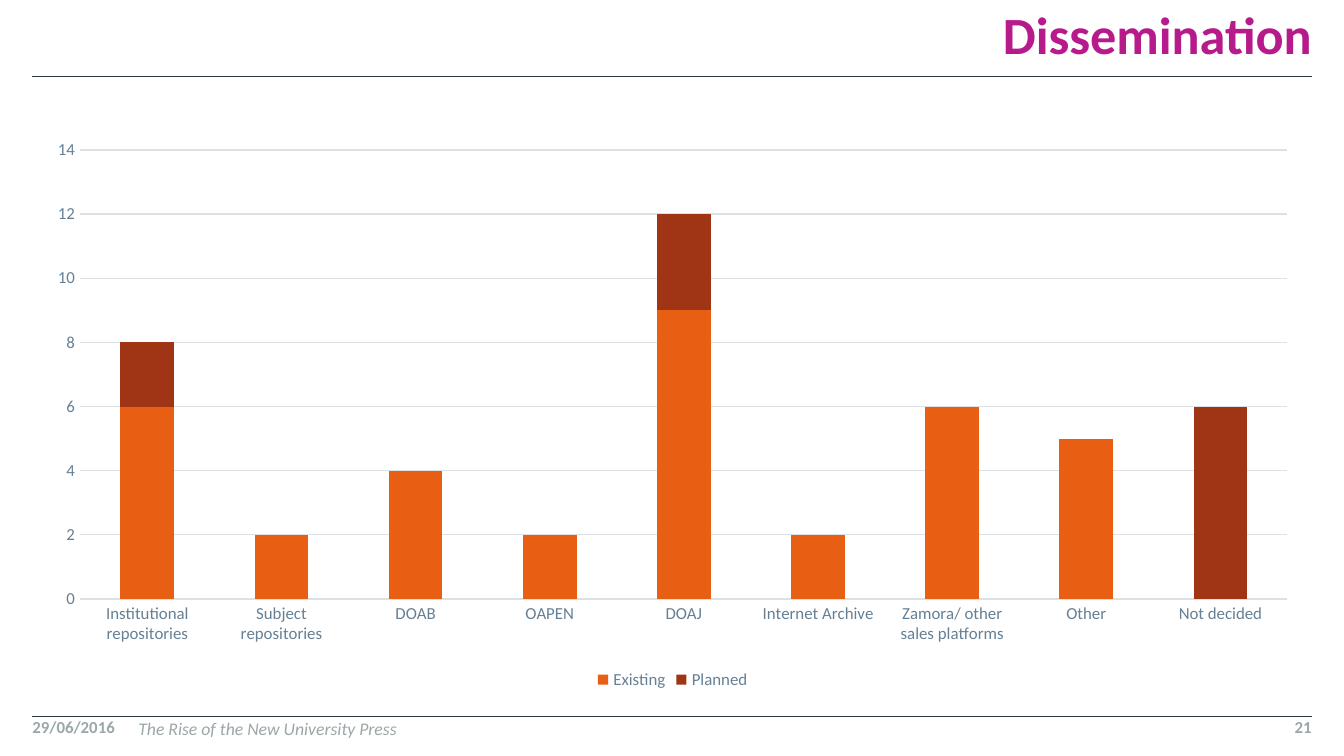
from lxml import etree
from pptx import Presentation
from pptx import util as u
from pptx.chart.data import CategoryChartData
from pptx.dml.color import RGBColor
from pptx.enum import chart as ch, shapes, text
from pptx.oxml.ns import qn

WIDTH = 10
HEIGHT = WIDTH * 9 / 16
LEFT, RIGHT = 0.24, 9.76
TOP_RULE, FOOT_RULE = 0.57, 5.33
SIDE_W, FOOT_H = 0.79, 0.18
FONT = "Calibri"
INK, MAGENTA, GREY = "2C3841", "B71A8B", "9BA7A8"
LABEL, GRID = "658095", "DBE2E7"

CATEGORIES = ["Institutional repositories", "Subject repositories", "DOAB",
              "OAPEN", "DOAJ", "Internet Archive",
              "Zamora/ other sales platforms", "Other", "Not decided"]
SERIES = [("Existing", (6, 2, 4, 2, 9, 2, 6, 5, 0), "E85E12"),
          ("Planned", (2, 0, 0, 0, 3, 0, 0, 0, 6), "9F3515")]


def rgb(value):
    return RGBColor.from_string(value)


def style_font(font, size, color, bold=False, italic=False):
    font.name, font.size = FONT, u.Pt(size)
    font.bold, font.italic = bold, italic
    font.color.rgb = rgb(color)


def style_line(line, color, width):
    line.color.rgb = rgb(color)
    line.width = u.Pt(width)


def fill_text(sp, words, align, anchor, size, color, top=0, **style):
    tf = sp.text_frame
    tf.word_wrap = True
    tf.auto_size = text.MSO_AUTO_SIZE.NONE
    tf.vertical_anchor = anchor
    tf.margin_left = tf.margin_right = tf.margin_bottom = 0
    tf.margin_top = u.Inches(top)
    tf.text = words
    p = tf.paragraphs[0]
    p.alignment = align
    style_font(p.runs[0].font, size, color, **style)
    return p


def add_title(s, words):
    sp = s.shapes.title
    sp.left, sp.top = u.Inches(3.03), 0
    sp.width, sp.height = u.Inches(RIGHT - 3.03), u.Inches(0.49)
    p = fill_text(sp, words, text.PP_ALIGN.RIGHT, text.MSO_ANCHOR.BOTTOM,
                  28, MAGENTA, bold=True)
    p.line_spacing = 0.9


def add_rule(s, y):
    line = s.shapes.add_connector(
        shapes.MSO_CONNECTOR.STRAIGHT,
        u.Inches(LEFT), u.Inches(y), u.Inches(RIGHT), u.Inches(y))
    style_line(line.line, INK, 0.5)
    etree.SubElement(line._element.spPr, qn("a:effectLst"))


def add_footer(s, x, width, words, size=9, align=text.PP_ALIGN.LEFT, **style):
    sp = s.shapes.add_textbox(u.Inches(x), u.Inches(FOOT_RULE),
                              u.Inches(width), u.Inches(FOOT_H))
    fill_text(sp, words, align, text.MSO_ANCHOR.TOP, size, GREY, **style)


def style_axis(axis):
    axis.major_tick_mark = axis.minor_tick_mark = ch.XL_TICK_MARK.NONE
    style_font(axis.tick_labels.font, 9, LABEL)


def add_stacked_chart(s):
    data = CategoryChartData()
    data.categories = CATEGORIES
    for name, values, _ in SERIES:
        data.add_series(name, values)
    chart = s.shapes.add_chart(
        ch.XL_CHART_TYPE.COLUMN_STACKED, u.Inches(LEFT), u.Inches(0.96),
        u.Inches(9.53), u.Inches(4.21), data).chart
    chart.has_title = False
    style_font(chart.font, 10, INK)

    # Columns
    plot = chart.plots[0]
    plot.gap_width, plot.overlap = 150, 100
    plot.vary_by_categories = False
    for series, (_, _, color) in zip(plot.series, SERIES):
        series.format.fill.solid()
        series.format.fill.fore_color.rgb = rgb(color)

    # Axes and gridlines
    style_axis(chart.category_axis)
    style_line(chart.category_axis.format.line, GRID, 0.75)
    values = chart.value_axis
    style_axis(values)
    values.minimum_scale, values.maximum_scale, values.major_unit = 0, 14, 2
    values.format.line.fill.background()
    values.has_major_gridlines = True
    style_line(values.major_gridlines.format.line, GRID, 0.75)

    # Legend
    chart.has_legend = True
    chart.legend.position = ch.XL_LEGEND_POSITION.BOTTOM
    chart.legend.include_in_layout = False
    style_font(chart.legend.font, 9, LABEL)


def main():
    prs = Presentation()
    prs.slide_width, prs.slide_height = u.Inches(WIDTH), u.Inches(HEIGHT)
    s = prs.slides.add_slide(prs.slide_layouts[5])

    # Header and rules
    for y in (TOP_RULE, FOOT_RULE):
        add_rule(s, y)
    add_title(s, "Dissemination")

    # Footer: date, talk name, page number
    add_footer(s, LEFT, SIDE_W, "29/06/2016", bold=True)
    add_footer(s, LEFT + SIDE_W, RIGHT - LEFT - 2 * SIDE_W,
               "The Rise of the New University Press",
               size=9.5, top=0.01, italic=True)
    add_footer(s, RIGHT - SIDE_W, SIDE_W, "21",
               align=text.PP_ALIGN.RIGHT, bold=True)

    add_stacked_chart(s)
    prs.save("out.pptx")


if __name__ == "__main__":
    main()
